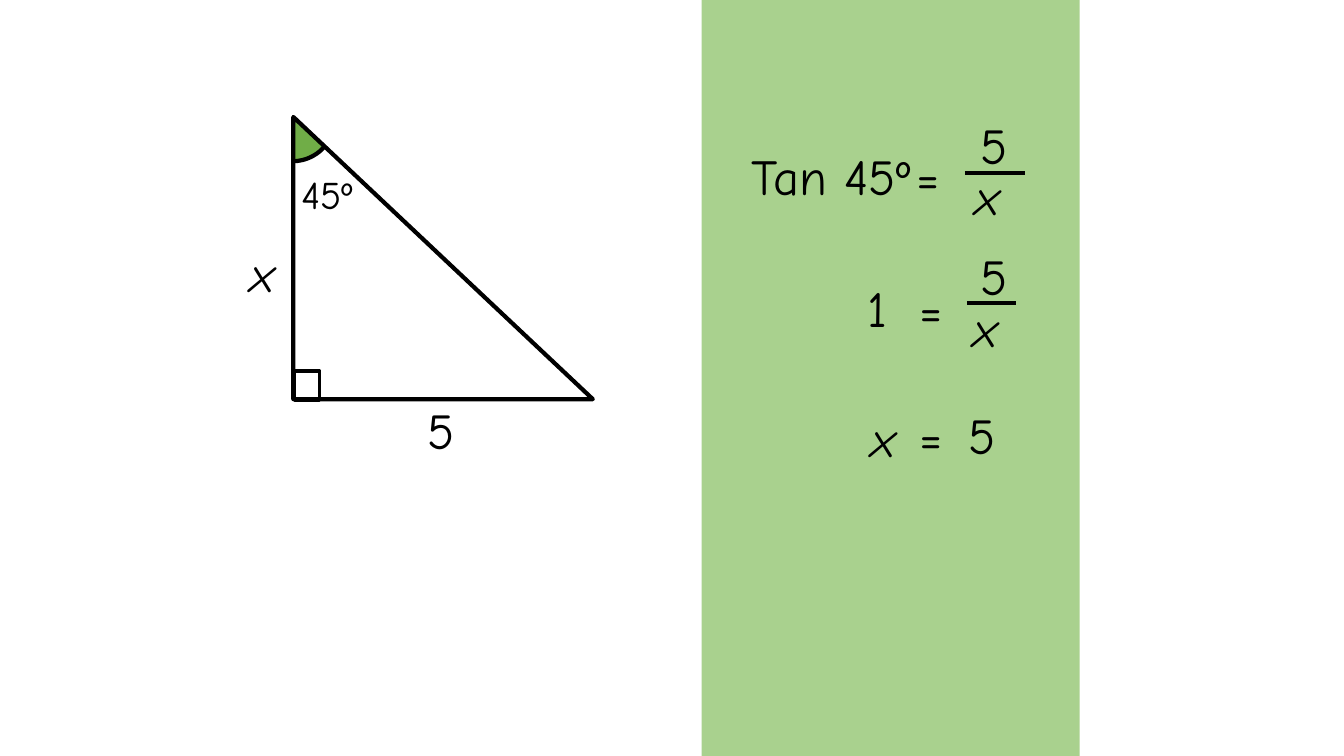
"""Build a slide that solves a right triangle with the tangent of 45 degrees."""
from math import cos, radians, sin

from lxml import etree
from pptx import Presentation
from pptx.dml.color import RGBColor
from pptx.enum.shapes import MSO_CONNECTOR, MSO_SHAPE
from pptx.enum.text import MSO_AUTO_SIZE, PP_ALIGN
from pptx.oxml.ns import qn
from pptx.util import Inches, Pt

RECT, TRI = MSO_SHAPE.RECTANGLE, MSO_SHAPE.RIGHT_TRIANGLE
LINE = MSO_CONNECTOR.STRAIGHT
LEFT, MID = PP_ALIGN.LEFT, PP_ALIGN.CENTER
GROW = MSO_AUTO_SIZE.SHAPE_TO_FIT_TEXT

WIDE, HIGH = 13.33, 7.5
FONT = "Comic Neue"
COLORS = {"ink": "000000", "panel": "A9D18E", "angle": "70AD47"}

# Places are percent of the slide's width and height.
PANEL = (52.21, 0, 28.13, 100)
SIDES = [
    (TRI, (21.83, 15.47, 22.28, 37.33), 3),
    (RECT, (21.9, 49.07, 1.88, 3.87), 2.25),
]
APEX, REACH, SWEEP = (21.76, 15.73), 0.42, (90, 41)
LABELS = [
    ("45º", 21.68, 21.87, 8.03, 28, LEFT),
    ("x", 17.93, 31.33, 3.38, 36, LEFT),
    ("5", 31.06, 52.13, 8.03, 36, LEFT),
    ("Tan 45º", 55.21, 18.53, 16.5, 36, LEFT),
    ("=", 67.44, 18.53, 6.45, 36, LEFT),
    ("5", 69.47, 14.4, 9, 36, MID),
    ("x", 69.39, 21.2, 8.1, 36, MID),
    ("1", 63.84, 36, 4.73, 36, LEFT),
    ("=", 66.62, 36.13, 5.33, 36, MID),
    ("5", 70.29, 31.73, 7.43, 36, MID),
    ("x", 69.99, 38.67, 6.68, 36, MID),
    ("x", 64.07, 53.2, 4.73, 36, LEFT),
    ("=", 66.62, 52.93, 5.33, 36, MID),
    ("5", 69.39, 52.8, 7.43, 36, MID),
]
BARS = [(71.79, 76.29, 22.93), (71.94, 75.62, 40.13)]

deck = Presentation()
deck.slide_width, deck.slide_height = Inches(WIDE), Inches(HIGH)
slide = deck.slides.add_slide(deck.slide_layouts[6])
shapes = slide.shapes


def across(share):
    return Inches(WIDE * share / 100)


def down(share):
    return Inches(HIGH * share / 100)


def place(left, top, width, height):
    return across(left), down(top), across(width), down(height)


def ink(line, weight):
    line.color.rgb = RGBColor.from_string(COLORS["ink"])
    line.width = Pt(weight)


def style(shape, fill=None, weight=None):
    shape.shadow.inherit = False
    if fill:
        shape.fill.solid()
        shape.fill.fore_color.rgb = RGBColor.from_string(COLORS[fill])
    else:
        shape.fill.background()
    if weight:
        ink(shape.line, weight)
    else:
        shape.line.fill.background()


def trace(dots, closed):
    pen = shapes.build_freeform(*dots[0])
    pen.add_line_segments(dots[1:], close=closed)
    return pen.convert_to_shape()


def write(text, left, top, width, size, align):
    height = Inches(0.1 + size * 1.22 / 72)
    box = shapes.add_textbox(across(left), down(top), across(width), height)
    frame = box.text_frame
    frame.word_wrap = True
    frame.auto_size = GROW
    para = frame.paragraphs[0]
    para.alignment = align
    run = para.add_run()
    run.text = text
    run.font.name = FONT
    run.font.size = Pt(size)
    run.font.italic = text == "x"
    run.font.color.rgb = RGBColor.from_string(COLORS["ink"])


style(shapes.add_shape(RECT, *place(*PANEL)), "panel")

tip = across(APEX[0]), down(APEX[1])
start, end = SWEEP
arc = [
    (tip[0] + Inches(REACH * cos(radians(turn))),
     tip[1] + Inches(REACH * sin(radians(turn))))
    for turn in range(start, end - 1, -1)
]
style(trace([tip] + arc, True), "angle")
style(trace(arc, False), weight=3)

for kind, spot, weight in SIDES:
    style(shapes.add_shape(kind, *place(*spot)), weight=weight)

for label in LABELS:
    write(*label)

for left, right, level in BARS:
    bar = shapes.add_connector(
        LINE, across(left), down(level), across(right), down(level))
    ink(bar.line, 3)
    etree.SubElement(bar.element.spPr, qn("a:effectLst"))

deck.save("out.pptx")
